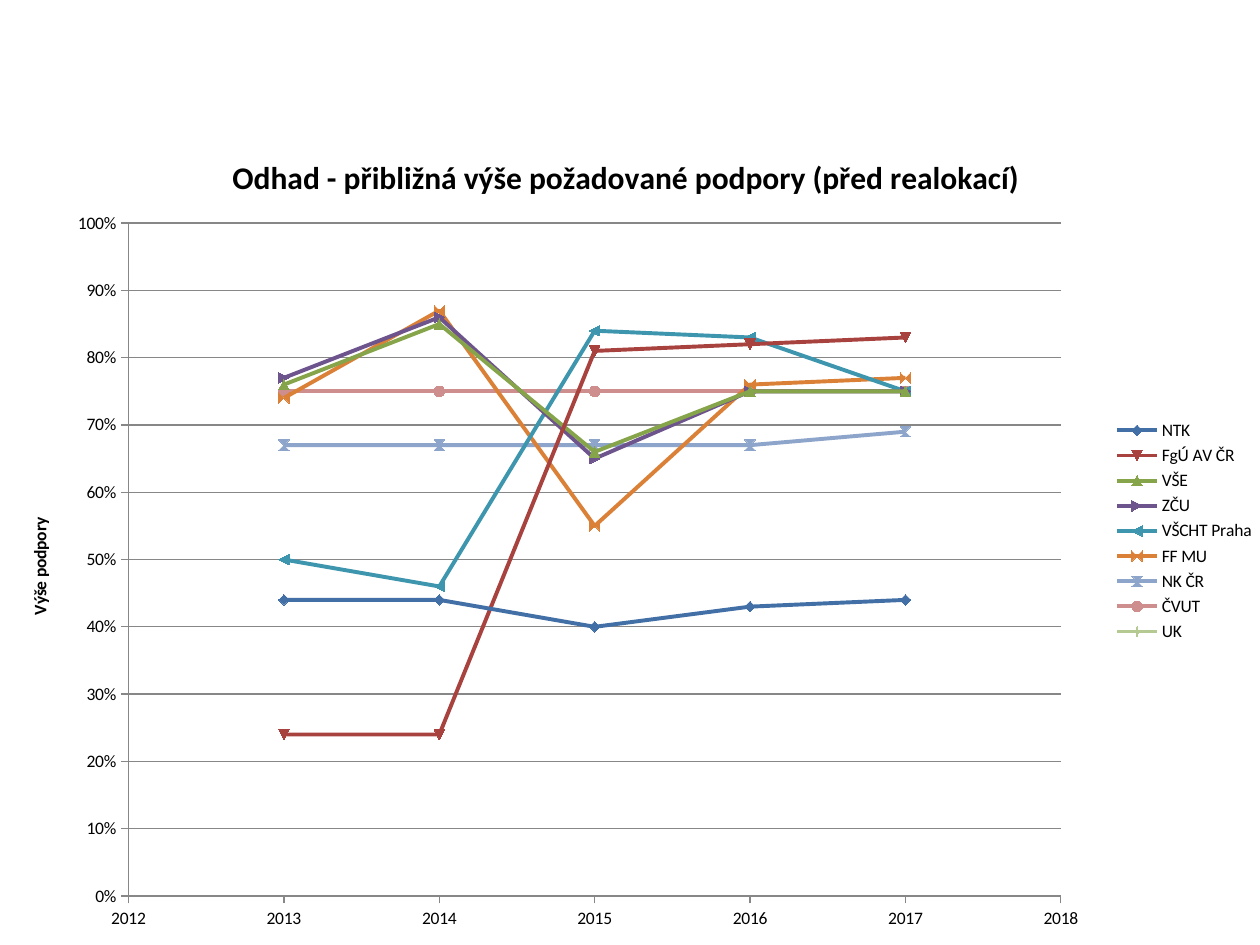
import pptx
import pptx.chart.data
import pptx.dml.color
import pptx.enum.chart
import pptx.oxml
import pptx.util
from pptx.util import Inches

COLORS = {
    "text": "000000",
    "axis": "878787",
    "NTK": "416FA6",
    "FgÚ AV ČR": "A8423F",
    "VŠE": "86A44A",
    "ZČU": "6E548D",
    "VŠCHT Praha": "3D96AE",
    "FF MU": "DA8137",
    "NK ČR": "8EA5CB",
    "ČVUT": "CE8E8D",
    "UK": "B5CA92",
}
YEARS = range(2013, 2018)
SUPPORT = {
    "NTK": [0.44, 0.44, 0.4, 0.43, 0.44],
    "FgÚ AV ČR": [0.24, 0.24, 0.81, 0.82, 0.83],
    "VŠE": [0.76, 0.85, 0.66, 0.75, 0.75],
    "ZČU": [0.77, 0.86, 0.65, 0.75, 0.75],
    "VŠCHT Praha": [0.5, 0.46, 0.84, 0.83, 0.75],
    "FF MU": [0.74, 0.87, 0.55, 0.76, 0.77],
    "NK ČR": [0.67, 0.67, 0.67, 0.67, 0.69],
    "ČVUT": [0.75] * 5,
    "UK": [0.75] * 5,
}
CHART_NS = "http://schemas.openxmlformats.org/drawingml/2006/chart"


def write_title(frame, text, size=10, bold=True, color="text"):
    frame.text = text
    font = frame.paragraphs[0].runs[0].font
    font.name = "Calibri"
    font.size = pptx.util.Pt(size)
    font.bold = bold
    font.color.rgb = pptx.dml.color.RGBColor.from_string(COLORS[color])


def set_layout(element, position, inner=False, **fractions):
    for old in element.findall(f"{{{CHART_NS}}}layout"):
        element.remove(old)
    target = '<c:layoutTarget val="inner"/>' if inner else ""
    modes = "".join(f'<c:{key}Mode val="edge"/>' for key in "xy")
    values = "".join(f'<c:{key} val="{value}"/>' for key, value in fractions.items())
    element.insert(position, pptx.oxml.parse_xml(
        f'<c:layout xmlns:c="{CHART_NS}"><c:manualLayout>'
        f"{target}{modes}{values}</c:manualLayout></c:layout>"))


deck = pptx.Presentation()
deck.slide_width, deck.slide_height = Inches(10), Inches(7.5)
page = deck.slides.add_slide(deck.slide_layouts[6])

data = pptx.chart.data.XyChartData(number_format="0%")
for name, shares in SUPPORT.items():
    series = data.add_series(name)
    for year, share in zip(YEARS, shares):
        series.add_data_point(year, share)

chart = page.shapes.add_chart(
    pptx.enum.chart.XL_CHART_TYPE.XY_SCATTER_LINES,
    Inches(0), Inches(0.93), Inches(10), Inches(6.57), data).chart
chart.font.name = "Calibri"
chart.font.size = pptx.util.Pt(10)
chart.font.color.rgb = pptx.dml.color.RGBColor.from_string(COLORS["text"])

plot = chart.plots[0]
plot.vary_by_categories = False
for series in plot.series:
    series.smooth = False
    color = pptx.dml.color.RGBColor.from_string(COLORS[series.name])
    series.format.line.color.rgb = color
    series.format.line.width = pptx.util.Pt(2.25)
    series.marker.size = 6
    series.marker.format.fill.solid()
    series.marker.format.fill.fore_color.rgb = color

year_axis, support_axis = chart.category_axis, chart.value_axis
scales = [(year_axis, 2012, 2018, 1, "General"), (support_axis, 0, 1, 0.1, "0%")]
for axis, low, high, step, number_format in scales:
    axis.minimum_scale, axis.maximum_scale, axis.major_unit = low, high, step
    axis.major_tick_mark = pptx.enum.chart.XL_TICK_MARK.OUTSIDE
    axis.minor_tick_mark = pptx.enum.chart.XL_TICK_MARK.NONE
    axis.tick_labels.number_format = number_format
    axis.tick_labels.number_format_is_linked = False
    axis.has_major_gridlines = axis is support_axis
    axis.format.line.color.rgb = pptx.dml.color.RGBColor.from_string(COLORS["axis"])
gridline = support_axis.major_gridlines.format.line
gridline.color.rgb = pptx.dml.color.RGBColor.from_string(COLORS["axis"])
gridline.width = pptx.util.Pt(0.75)

chart.has_title = True
write_title(chart.chart_title.text_frame,
            "Odhad - přibližná výše požadované podpory (před realokací)", size=18)
write_title(support_axis.axis_title.text_frame, "Výše podpory")
chart.has_legend = True
chart.legend.position = pptx.enum.chart.XL_LEGEND_POSITION.RIGHT
chart.legend.include_in_layout = False

root = chart.element if hasattr(chart, "element") else chart._chartSpace
set_layout(root.find(f".//{{{CHART_NS}}}plotArea"), 0, inner=True,
           x=0.102, y=0.128, w=0.74, h=0.813)
set_layout(root.find(f".//{{{CHART_NS}}}legend"), 1, x=0.88, y=0.36, w=0.12, h=0.28)
set_layout(root.find(f"./{{{CHART_NS}}}chart/{{{CHART_NS}}}title"), 1, x=0.18, y=0.04)
set_layout(support_axis.axis_title._element, 1, x=0.02, y=0.48)

deck.save("out.pptx")
